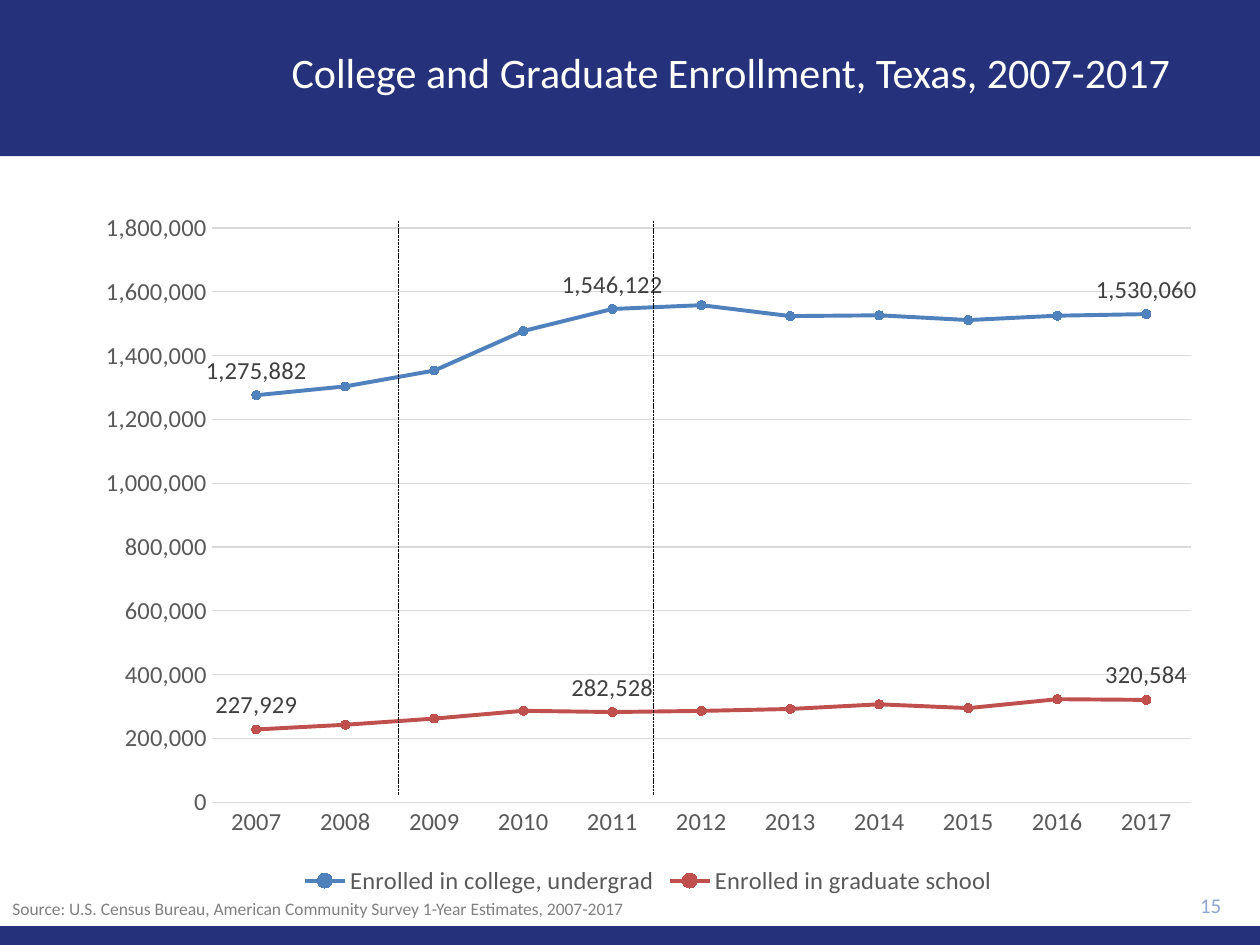
from typing import NamedTuple

from lxml.etree import SubElement
from pptx import Presentation
from pptx.chart.data import CategoryChartData as Data
from pptx.dml.color import RGBColor
from pptx.enum.chart import XL_CHART_TYPE as Kind
from pptx.enum.chart import XL_LABEL_POSITION as Spot
from pptx.enum.chart import XL_LEGEND_POSITION as Side
from pptx.enum.chart import XL_MARKER_STYLE as Mark
from pptx.enum.chart import XL_TICK_MARK as Tick
from pptx.enum.dml import MSO_LINE as Dash
from pptx.enum.shapes import MSO_CONNECTOR as Link
from pptx.enum.shapes import MSO_SHAPE as Shape
from pptx.enum.text import MSO_ANCHOR as Anchor
from pptx.enum.text import PP_ALIGN as Align
from pptx.oxml.ns import qn
from pptx.util import Cm, Pt

FONT = "Calibri"
NAVY = RGBColor(0x25, 0x32, 0x7B)
WHITE = RGBColor(0xFF, 0xFF, 0xFF)
BLACK = RGBColor(0, 0, 0)
PALE = RGBColor(0x8F, 0xA5, 0xD1)
GRAY = RGBColor(0x80, 0x80, 0x80)
DARK = RGBColor(0x40, 0x40, 0x40)
MID = RGBColor(0x59, 0x59, 0x59)
RULE = RGBColor(0xD9, 0xD9, 0xD9)
BLUE = RGBColor(0x4F, 0x81, 0xBD)
RED = RGBColor(0xC0, 0x50, 0x4D)


class Box(NamedTuple):
    """Left, top, width and height in centimetres."""
    x: float
    y: float
    w: float
    h: float

    def cm(self) -> list:
        return [Cm(v) for v in self]


class Trend(NamedTuple):
    name: str
    color: RGBColor
    vals: tuple


YEARS = range(2007, 2018)
SHOWN = (2007, 2011, 2017)  # years with a value label
TRENDS = (
    Trend("Enrolled in college, undergrad", BLUE,
          (1275882, 1303492, 1353185, 1477123, 1546122, 1558096,
           1523860, 1526401, 1511378, 1525151, 1530060)),
    Trend("Enrolled in graduate school", RED,
          (227929, 242628, 261930, 286325, 282528, 286125,
           292064, 306680, 294710, 322757, 320584)),
)
BANDS = (Box(0, 0, 25.4, 3.15), Box(0, 18.67, 25.4, 0.38))
SPLITS = (8.03, 13.18)  # x of the dashed dividers


def set_font(font, size: float, color: RGBColor) -> None:
    font.name, font.size = FONT, Pt(size)
    font.color.rgb = color


def add_text(slide, text: str, box: Box, *, size: float, color: RGBColor,
             align=Align.LEFT, anchor=Anchor.TOP, lead: float = 1.0) -> None:
    frame = slide.shapes.add_textbox(*box.cm()).text_frame
    frame.word_wrap = True
    frame.vertical_anchor = anchor
    para = frame.paragraphs[0]
    para.alignment, para.line_spacing = align, lead
    run = para.add_run()
    run.text = text
    set_font(run.font, size, color)


def add_band(slide, box: Box) -> None:
    band = slide.shapes.add_shape(Shape.RECTANGLE, *box.cm())
    band.shadow.inherit = False
    band.fill.solid()
    band.fill.fore_color.rgb = NAVY
    band.line.fill.background()


def add_split(slide, x: float) -> None:
    split = slide.shapes.add_connector(
        Link.STRAIGHT, Cm(x), Cm(4.45), Cm(x), Cm(16.03))
    split.line.color.rgb = BLACK
    split.line.width = Pt(0.5)
    split.line.dash_style = Dash.SQUARE_DOT
    SubElement(split._element.spPr, qn("a:effectLst"))


def set_line(line, color: RGBColor, width: float) -> None:
    line.color.rgb = color
    line.width = Pt(width)


def style_trend(plot, trend: Trend) -> None:
    plot.smooth = False
    set_line(plot.format.line, trend.color, 2.25)
    mark = plot.marker
    mark.style, mark.size = Mark.CIRCLE, 5
    mark.format.fill.solid()
    mark.format.fill.fore_color.rgb = trend.color
    set_line(mark.format.line, trend.color, 0.75)
    plot.data_labels.show_value = False
    for year in SHOWN:
        label = plot.points[YEARS.index(year)].data_label
        set_font(label.font, 14, DARK)
        label.position = Spot.ABOVE


def add_graph(slide, box: Box) -> None:
    data = Data(number_format="#,##0")
    data.categories = [str(year) for year in YEARS]
    for trend in TRENDS:
        data.add_series(trend.name, trend.vals)
    chart = slide.shapes.add_chart(
        Kind.LINE_MARKERS, *box.cm(), data).chart
    set_font(chart.font, 14, BLACK)
    chart.has_title = False
    chart.plots[0].vary_by_categories = False

    # Legend
    chart.has_legend = True
    chart.legend.position = Side.BOTTOM
    chart.legend.include_in_layout = False
    set_font(chart.legend.font, 14, MID)

    # Axes
    cat, val = chart.category_axis, chart.value_axis
    for axis in (cat, val):
        axis.major_tick_mark = axis.minor_tick_mark = Tick.NONE
        set_font(axis.tick_labels.font, 14, MID)
    set_line(cat.format.line, RULE, 0.75)
    val.format.line.fill.background()
    val.minimum_scale, val.maximum_scale = 0, 1800000
    val.major_unit = 200000
    val.has_major_gridlines = True
    set_line(val.major_gridlines.format.line, RULE, 0.75)
    val.tick_labels.number_format = "#,##0"
    val.tick_labels.number_format_is_linked = False

    for plot, trend in zip(chart.series, TRENDS):
        style_trend(plot, trend)


def main() -> None:
    deck = Presentation()
    deck.slide_width, deck.slide_height = Cm(25.4), Cm(19.05)
    slide = deck.slides.add_slide(deck.slide_layouts[6])

    # Bands, title and page number
    for band in BANDS:
        add_band(slide, band)
    add_text(slide, "College and Graduate Enrollment, Texas, 2007-2017",
             Box(4.32, 0.25, 20.83, 2.54), size=24, color=WHITE,
             align=Align.CENTER, anchor=Anchor.MIDDLE, lead=0.9)
    add_text(slide, "15", Box(22.61, 17.81, 2.26, 0.86), size=12, color=PALE,
             align=Align.RIGHT, anchor=Anchor.MIDDLE)

    # Chart with its dividers
    add_graph(slide, Box(1.68, 4.01, 22.78, 14.15))
    for x in SPLITS:
        add_split(slide, x)

    # Source
    add_text(slide, "Source: U.S. Census Bureau, American Community Survey "
             "1-Year Estimates, 2007-2017",
             Box(0, 17.98, 17.78, 0.69), size=10, color=GRAY)

    deck.save("out.pptx")


if __name__ == "__main__":
    main()
